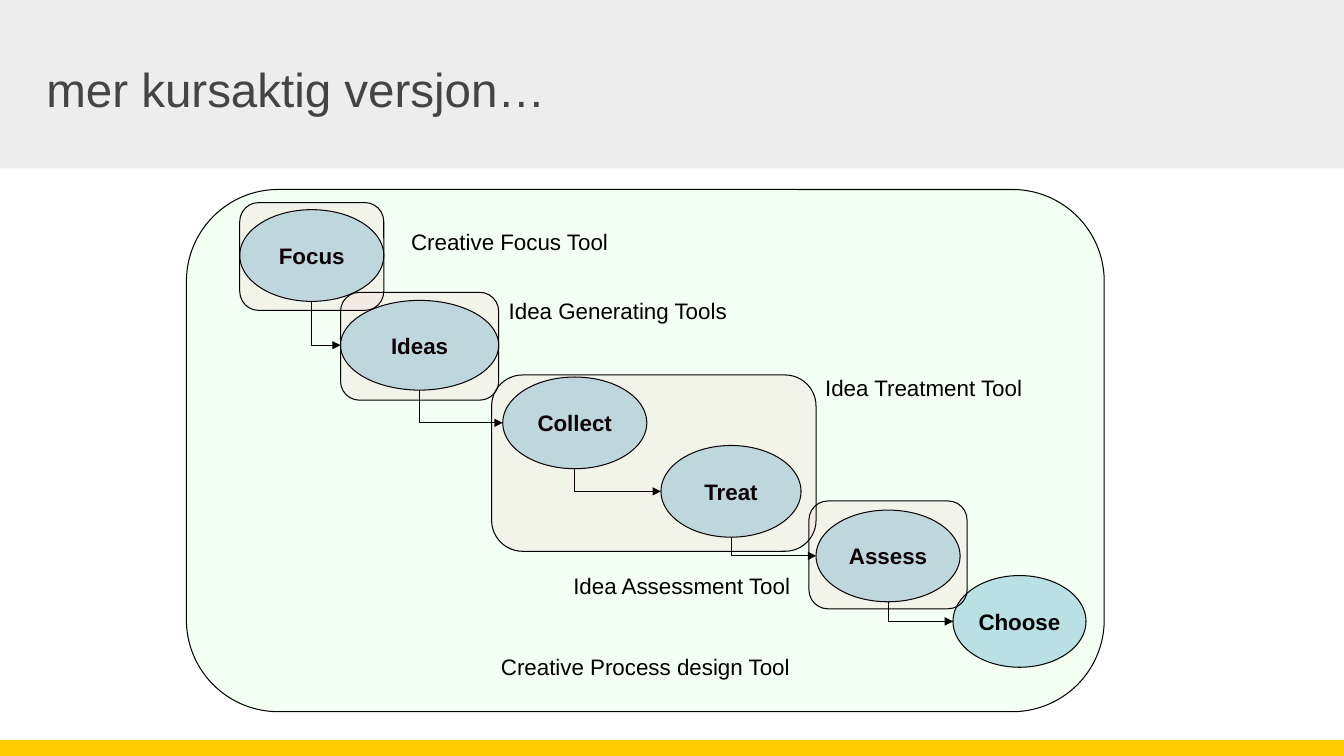
from itertools import pairwise
from lxml.etree import SubElement
from pptx import Presentation
from pptx.dml.color import RGBColor
from pptx.enum.shapes import MSO_CONNECTOR, MSO_SHAPE
from pptx.enum.text import MSO_ANCHOR, PP_ALIGN
from pptx.oxml.ns import qn
from pptx.util import Inches, Pt

W, H = Inches(13.34), Inches(7.5)
BLACK = "000000"
TITLE = ("mer kursaktig versjon…", (3.45, 6.93, 55.4, 9.47))
BANDS = [("EDEDED", (0, 0, 100, 22.27)), ("FECB00", (0, 97.87, 100, 2.13))]
PROCESS = ("Creative Process design Tool", (13.87, 25.07, 68.29, 69.07))
STEPS = [
    ("Focus", (17.84, 27.73, 10.72, 12.13)),
    ("Ideas", (25.34, 39.73, 11.77, 11.87)),
    ("Collect", (37.41, 49.87, 10.72, 12.13)),
    ("Treat", (49.18, 58.93, 10.42, 12.13)),
    ("Assess", (60.72, 67.47, 10.72, 12.13)),
    ("Choose", (70.91, 76.13, 9.9, 12.13)),
]
LABELS = [
    ("Creative Focus Tool", (29.91, 30, 16.34, 4.53)),
    ("Idea Generating Tools", (37.18, 39.07, 19.49, 4.53)),
    ("Idea Treatment Tool", (60.72, 49.33, 16.34, 4.53)),
    ("Idea Assessment Tool", (41.98, 75.47, 18.29, 4.53)),
]
FRAMES = [
    (17.84, 26.8, 10.72, 14.27),
    (25.34, 38.67, 11.77, 14.27),
    (36.58, 49.6, 24.14, 23.33),
    (60.19, 66.27, 11.77, 14.27),
]


def rgb(color):
    return RGBColor.from_string(color)


def place(box):
    """Turn percentages of the slide into lengths."""
    return [int(v * full / 100) for v, full in zip(box, (W, H, W, H))]


def add_box(s, kind, box, fill, alpha=None, outlined=True):
    sp = s.shapes.add_shape(kind, *place(box))
    sp.shadow.inherit = False
    sp.fill.solid()
    sp.fill.fore_color.rgb = rgb(fill)
    if alpha:
        clr = sp._element.spPr.find(qn("a:solidFill"))[0]
        SubElement(clr, qn("a:alpha"), val=str(alpha * 1000))
    if outlined:
        sp.line.color.rgb = rgb(BLACK)
        sp.line.width = Pt(0.75)
    else:
        sp.line.fill.background()
    if kind == MSO_SHAPE.ROUNDED_RECTANGLE:
        sp.adjustments[0] = 0.176
    return sp


def write(sp, text, size=16, color=BLACK, bold=False, align=PP_ALIGN.LEFT,
          anchor=MSO_ANCHOR.TOP, inset=(0.09, 0.04), spacing=0.93, wrap=True):
    tf = sp.text_frame
    tf.word_wrap = wrap
    tf.vertical_anchor = anchor
    tf.margin_left = tf.margin_right = Inches(inset[0])
    tf.margin_top = tf.margin_bottom = Inches(inset[1])
    p = tf.paragraphs[0]
    p.text = text
    p.alignment = align
    p.line_spacing = spacing
    p.font.name, p.font.size, p.font.bold = "Arial", Pt(size), bold
    p.font.color.rgb = rgb(color)


def add_arrow(s, a, b):
    """Run down from the bottom of one step, then right into the next."""
    x1, y1 = a.left + a.width // 2, a.top + a.height
    x2, y2 = b.left, b.top + b.height // 2
    cx, cy, dx, dy = (x1 + x2) // 2, (y1 + y2) // 2, (x2 - x1) // 2, (y2 - y1) // 2
    cn = s.shapes.add_connector(MSO_CONNECTOR.ELBOW, cx - dy, cy - dx, cx + dy, cy + dx)
    cn.line.color.rgb = rgb(BLACK)
    cn.line.width = Pt(0.75)
    pr = cn._element.spPr
    pr.find(qn("a:prstGeom")).set("prst", "bentConnector2")
    xfrm = pr.find(qn("a:xfrm"))
    xfrm.set("rot", str(270 * 60000))
    xfrm.set("flipH", "1")
    SubElement(pr.find(qn("a:ln")), qn("a:tailEnd"), type="triangle")
    SubElement(pr, qn("a:effectLst"))


def main():
    prs = Presentation()
    prs.slide_width, prs.slide_height = W, H
    s = prs.slides.add_slide(prs.slide_layouts[6])
    for color, box in BANDS:
        add_box(s, MSO_SHAPE.RECTANGLE, box, color, outlined=False)
    text, box = PROCESS
    process = add_box(s, MSO_SHAPE.ROUNDED_RECTANGLE, box, "00FF00", alpha=5)
    write(process, text, align=PP_ALIGN.CENTER, anchor=MSO_ANCHOR.BOTTOM, wrap=False)
    text, box = TITLE
    write(s.shapes.add_textbox(*place(box)), text, size=34, color="444444",
          anchor=MSO_ANCHOR.MIDDLE, inset=(0, 0), spacing=1)
    steps = []
    for text, box in STEPS:
        sp = add_box(s, MSO_SHAPE.OVAL, box, "BBE0E3")
        write(sp, text, bold=True, align=PP_ALIGN.CENTER, anchor=MSO_ANCHOR.MIDDLE,
              inset=(0.09, 0.05), spacing=1, wrap=False)
        steps.append(sp)
    for a, b in pairwise(steps):
        add_arrow(s, a, b)
    for text, box in LABELS:
        write(s.shapes.add_textbox(*place(box)), text)
    for box in FRAMES:
        add_box(s, MSO_SHAPE.ROUNDED_RECTANGLE, box, "FF3366", alpha=5)
    prs.save("out.pptx")


if __name__ == "__main__":
    main()
